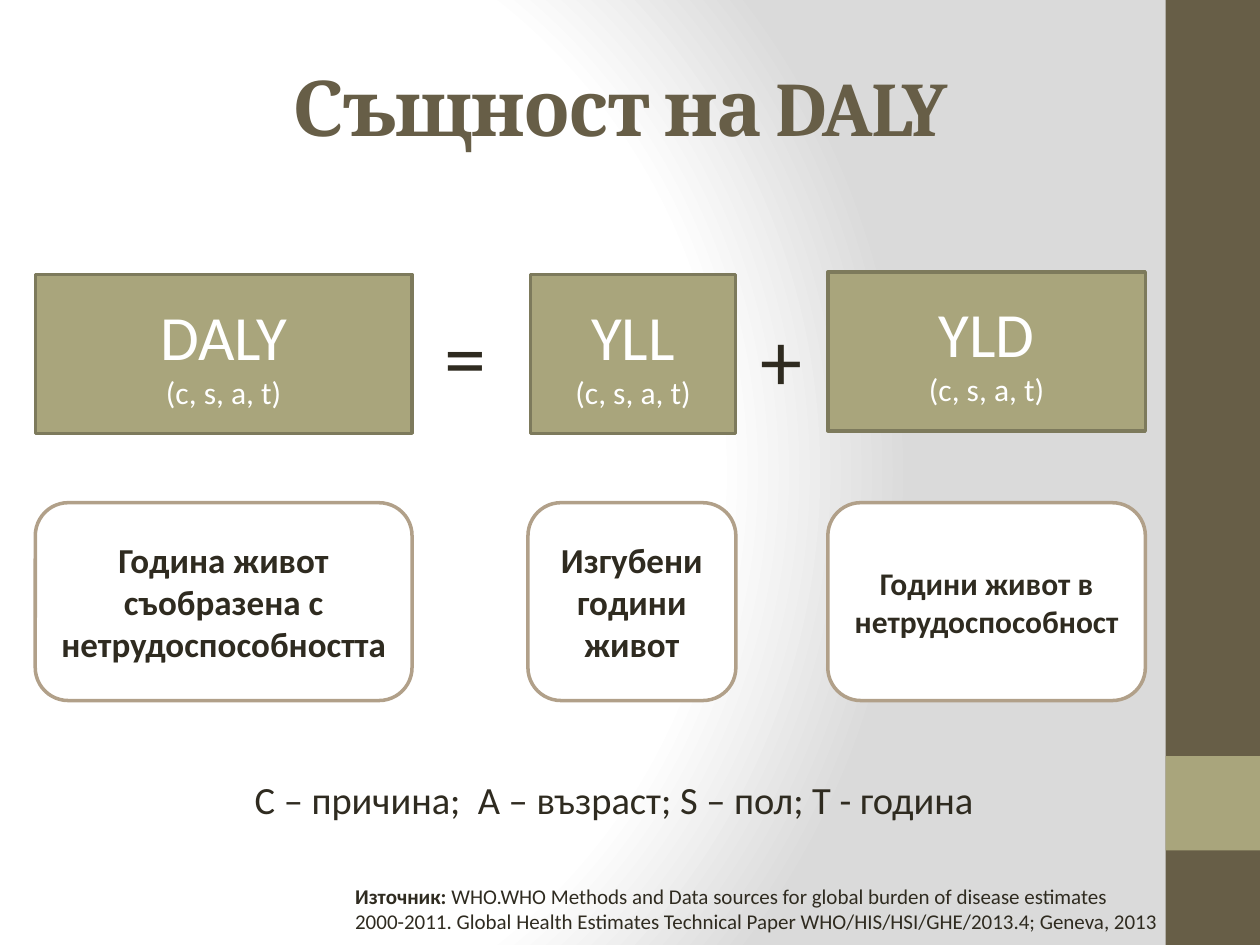
from typing import NamedTuple

from lxml import etree
from pptx import Presentation
from pptx.dml.color import RGBColor
from pptx.enum.shapes import MSO_SHAPE as Shape
from pptx.enum.text import MSO_ANCHOR as Anchor, PP_ALIGN as Align
from pptx.oxml.ns import qn
from pptx.util import Inches, Pt

BROWN, OLIVE, OLIVE_EDGE, TAN = "675E47", "A9A57C", "7D7A5C", "B1A089"
INK, WHITE, GREY = "2F2B20", "FFFFFF", "DADADA"


class Box(NamedTuple):
    left: float
    top: float
    width: float
    height: float


class Term(NamedTuple):
    name: str
    formula_box: Box
    meaning: str
    meaning_box: Box
    meaning_size: int


TERMS = [
    Term("DALY", Box(0.28, 2.18, 2.99, 1.26),
         "Година живот съобразена с нетрудоспособността", Box(0.28, 3.99, 2.99, 1.57), 20),
    Term("YLL", Box(4.21, 2.18, 1.63, 1.26),
         "Изгубени години живот", Box(4.19, 3.99, 1.65, 1.57), 20),
    Term("YLD", Box(6.57, 2.16, 2.52, 1.26),
         "Години живот в нетрудоспособност", Box(6.57, 3.99, 2.52, 1.57), 18),
]
OPERATORS = [("=", Box(3.43, 2.37, 0.71, 0.91)), ("+", Box(5.94, 2.39, 0.71, 0.91))]


def color(value: str) -> RGBColor:
    return RGBColor.from_string(value)


def set_background(slide) -> None:
    """Fill the background with a radial gradient, which python-pptx cannot make."""
    fill = slide.background.fill
    fill.solid()
    fill.fore_color.rgb = color(WHITE)
    properties = slide.element.find(".//" + qn("p:bgPr"))
    properties.remove(properties.find(qn("a:solidFill")))
    gradient = etree.Element(qn("a:gradFill"), rotWithShape="1")
    stops = etree.SubElement(gradient, qn("a:gsLst"))
    for position, value in ((0, WHITE), (75, WHITE), (100, GREY)):
        stop = etree.SubElement(stops, qn("a:gs"), pos=str(position * 1000))
        etree.SubElement(stop, qn("a:srgbClr"), val=value)
    circle = etree.SubElement(gradient, qn("a:path"), path="circle")
    etree.SubElement(circle, qn("a:fillToRect"), l="20000", t="50000", r="100000", b="50000")
    properties.insert(0, gradient)


def add_box(slide, kind: Shape, box: Box, fill: str, line: str | None = None):
    shape = slide.shapes.add_shape(kind, *map(Inches, box))
    shape.shadow.inherit = False
    shape.fill.solid()
    shape.fill.fore_color.rgb = color(fill)
    if line:
        shape.line.color.rgb = color(line)
        shape.line.width = Pt(2)
    else:
        shape.line.fill.background()
    return shape


def add_text_box(slide, box: Box):
    return slide.shapes.add_textbox(*map(Inches, box))


def write(shape, text: str, *, size: float, new: bool = False, font: str = "Calibri",
          ink: str = INK, bold: bool = False, align: Align = Align.LEFT,
          anchor: Anchor = Anchor.TOP):
    """Append a run to the last paragraph, or to a new one."""
    frame = shape.text_frame
    frame.word_wrap = True
    frame.vertical_anchor = anchor
    paragraph = frame.add_paragraph() if new else frame.paragraphs[-1]
    paragraph.alignment = align
    run = paragraph.add_run()
    run.text = text
    run.font.name = font
    run.font.size = Pt(size)
    run.font.bold = bold
    run.font.color.rgb = color(ink)
    return run


def add_term(slide, term: Term) -> None:
    centred = {"align": Align.CENTER, "anchor": Anchor.MIDDLE}
    formula = add_box(slide, Shape.RECTANGLE, term.formula_box, OLIVE, OLIVE_EDGE)
    write(formula, term.name, size=36, ink=WHITE, **centred)
    write(formula, "(c, s, a, t)", size=18, new=True, ink=WHITE, **centred)
    meaning = add_box(slide, Shape.ROUNDED_RECTANGLE, term.meaning_box, WHITE, TAN)
    write(meaning, term.meaning, size=term.meaning_size, bold=True, **centred)


def main() -> None:
    presentation = Presentation()
    presentation.slide_width, presentation.slide_height = Inches(10), Inches(7.5)
    slide = presentation.slides.add_slide(presentation.slide_layouts[6])
    set_background(slide)
    add_box(slide, Shape.RECTANGLE, Box(9.25, 0, 0.75, 7.5), BROWN)
    add_box(slide, Shape.RECTANGLE, Box(9.25, 6, 0.75, 0.75), OLIVE)

    title = add_text_box(slide, Box(0.76, 0.21, 8.33, 1.25))
    run = write(title, "Същност на DALY", size=44, font="Cambria", ink=BROWN, bold=True,
                align=Align.CENTER, anchor=Anchor.MIDDLE)
    run.font._element.set("spc", "-100")

    for term in TERMS:
        add_term(slide, term)
    for sign, box in OPERATORS:
        write(add_text_box(slide, box), sign, size=48)

    legend = add_text_box(slide, Box(0.71, 6.11, 8.33, 0.55))
    write(legend, "C – причина;  A – възраст; S – пол; T - година", size=22, align=Align.CENTER)

    source = add_text_box(slide, Box(2.72, 6.96, 7.09, 0.5))
    write(source, "Източник: ", size=12, bold=True)
    write(source, "WHO.WHO Methods and Data sources for global burden of disease estimates", size=12)
    write(source, "2000-2011. Global Health Estimates Technical Paper "
          "WHO/HIS/HSI/GHE/2013.4; Geneva, 2013", size=12, new=True)
    presentation.save("out.pptx")


if __name__ == "__main__":
    main()
